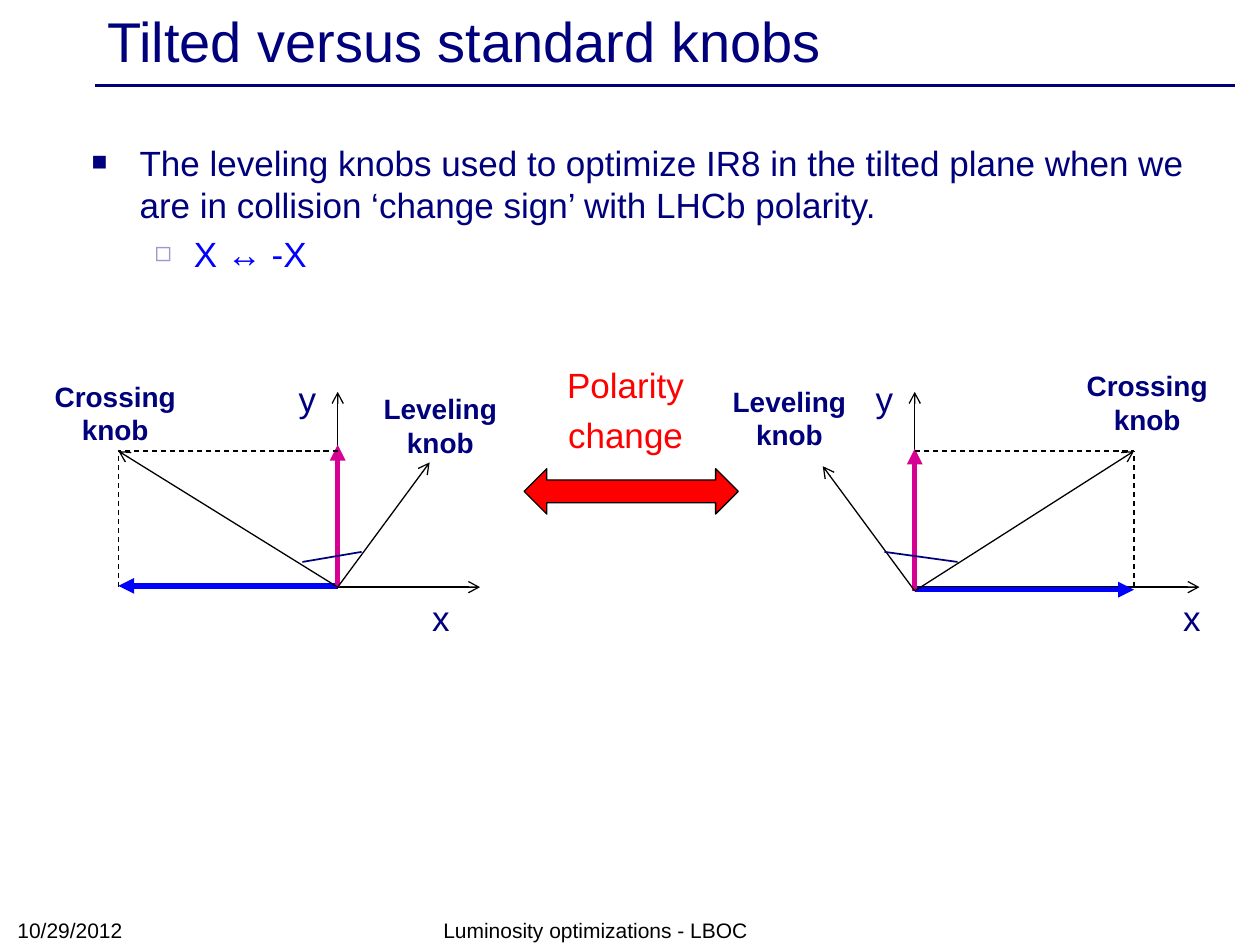
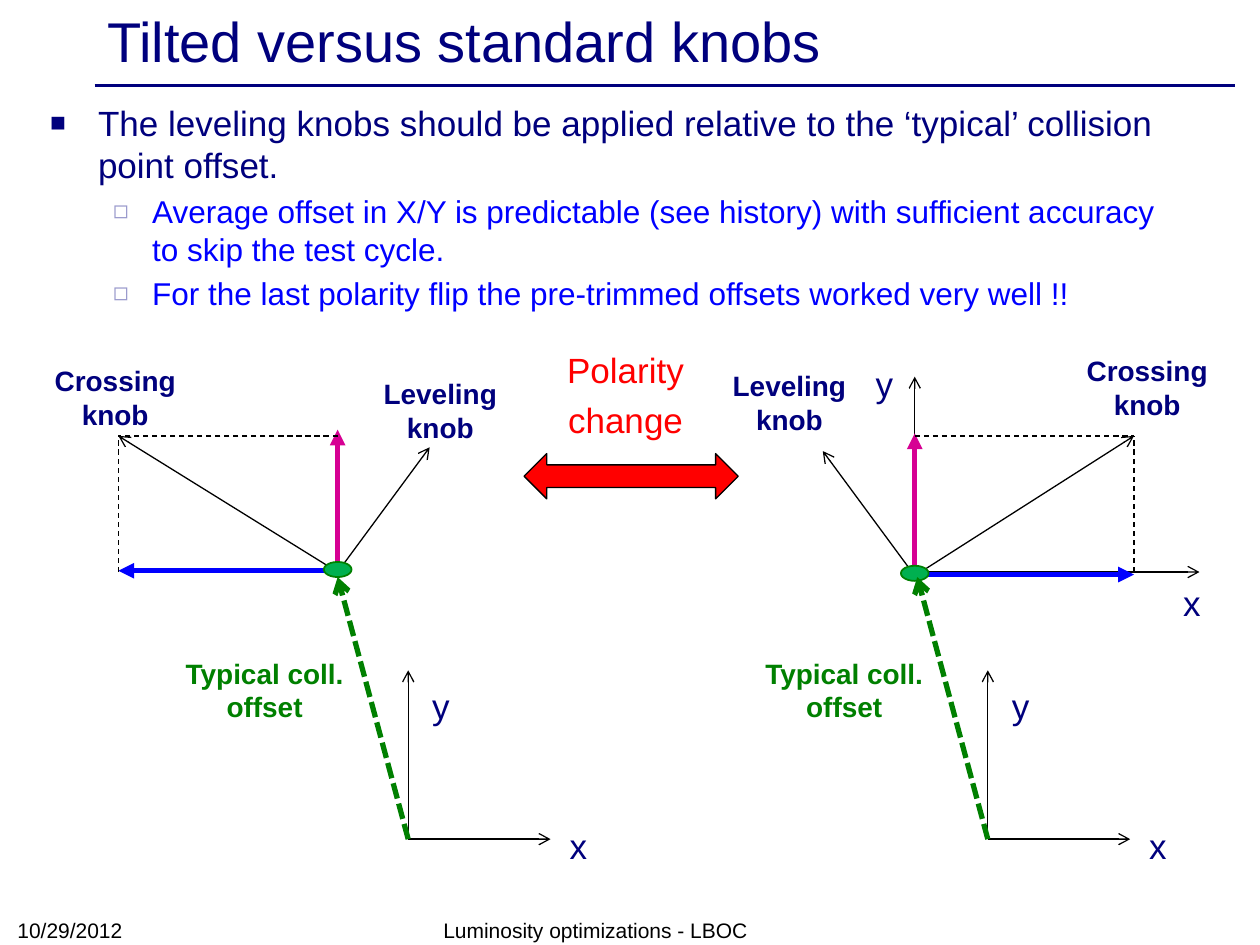
from dataclasses import dataclass

from pptx import Presentation
from pptx.dml.color import RGBColor
from pptx.enum import dml, shapes, text
from pptx.oxml.ns import qn
from pptx.util import Inches, Pt
from lxml import etree


@dataclass(frozen=True)
class Theme:
    font: str = "Arial"
    navy: str = "00007D"
    blue: str = "0000FF"
    lilac: str = "9999CC"
    magenta: str = "D60093"
    red: str = "FF0000"
    green: str = "008000"
    leaf: str = "00B050"
    black: str = "000000"
    title: int = 32
    body: int = 20
    sub: int = 18
    label: int = 16
    footer: int = 12
    thin: float = 0.75
    thick: float = 3


T = Theme()
ALIGN = text.PP_ALIGN
ANCHOR = text.MSO_ANCHOR
DASH = dml.MSO_LINE

# Knob diagrams: axis origin x, direction of the crossing knob, x axis length,
# drop of the knob origin below the axis, label places relative to the origin
LEFT = dict(x=2.68, sign=-1, axis=1.13, drop=0, x_label=0.65,
            crossing=(-2.48, -1.7), leveling=(0.23, -1.6))
RIGHT = dict(x=7.26, sign=1, axis=2.26, drop=0.03, x_label=2.03,
             crossing=(1.13, -1.78), leveling=(-1.58, -1.66))


# Basic parts

def rgb(value):
    return RGBColor.from_string(value)


def set_attrs(obj, **values):
    for name, value in values.items():
        setattr(obj, name, value)


def style_font(font, size, color, bold=False):
    set_attrs(font, name=T.font, size=Pt(size), bold=bold)
    font.color.rgb = rgb(color)


def add_line(slide, start, end, color=T.black, width=T.thin, dash=None, tip=None):
    ends = [Inches(v) for v in (*start, *end)]
    sp = slide.shapes.add_connector(shapes.MSO_CONNECTOR.STRAIGHT, *ends)
    sp.line.color.rgb = rgb(color)
    set_attrs(sp.line, width=Pt(width), dash_style=dash)
    if tip:
        etree.SubElement(sp.line._get_or_add_ln(), qn("a:tailEnd"), type=tip)
    etree.SubElement(sp._element.spPr, qn("a:effectLst"))


def add_text(slide, box, words, size, color, bold=False, wrap=True,
             align=ALIGN.CENTER, anchor=ANCHOR.TOP, spacing=None):
    tf = slide.shapes.add_textbox(*map(Inches, box)).text_frame
    set_attrs(tf, word_wrap=wrap, vertical_anchor=anchor)
    p = tf.paragraphs[0]
    set_attrs(p, text=words, alignment=align, line_spacing=spacing)
    style_font(p.runs[0].font, size, color, bold)


def add_shape(slide, kind, box, fill, line, width):
    sp = slide.shapes.add_shape(kind, *map(Inches, box))
    sp.shadow.inherit = False
    sp.fill.solid()
    sp.fill.fore_color.rgb = rgb(fill)
    sp.line.color.rgb = rgb(line)
    sp.line.width = Pt(width)


def add_axis_label(slide, x, y, name):
    add_text(slide, (x, y, 0.34, 0.47), name, T.body, T.navy, wrap=False, spacing=1.2)


def add_bullet(p, char, color, percent, left, hang):
    pPr = p._p.get_or_add_pPr()
    pPr.set("marL", str(Inches(left)))
    pPr.set("indent", str(-Inches(hang)))
    bu_color = etree.SubElement(pPr, qn("a:buClr"))
    etree.SubElement(bu_color, qn("a:srgbClr"), val=color)
    etree.SubElement(pPr, qn("a:buSzPct"), val=str(percent * 1000))
    etree.SubElement(pPr, qn("a:buFont"), typeface=T.font)
    etree.SubElement(pPr, qn("a:buChar"), char=char)


# Regions of a slide

def add_frame(prs):
    """Slide with title, rule and footer."""
    slide = prs.slides.add_slide(prs.slide_layouts[5])
    add_line(slide, (0.75, 0.68), (9.8, 0.68), T.navy, 2)
    sp = slide.shapes.title
    set_attrs(sp, left=Inches(0.75), top=Inches(0.03), width=Inches(9), height=Inches(0.57))
    tf = sp.text_frame
    set_attrs(tf, vertical_anchor=ANCHOR.MIDDLE, auto_size=text.MSO_AUTO_SIZE.NONE)
    p = tf.paragraphs[0]
    set_attrs(p, text="Tilted versus standard knobs", alignment=ALIGN.LEFT)
    style_font(p.runs[0].font, T.title, T.navy)
    for box, words in (((3.42, 7.25, 3.17, 0.28), "Luminosity optimizations - LBOC"),
                       ((0.04, 7.24, 2.33, 0.29), "10/29/2012")):
        add_text(slide, box, words, T.footer, T.black, align=ALIGN.LEFT, anchor=ANCHOR.BOTTOM)
    return slide


def add_body(slide, box, point, subpoints, sub_size):
    tf = slide.shapes.add_textbox(*map(Inches, box)).text_frame
    tf.word_wrap = True
    for i, words in enumerate([point, *subpoints]):
        p = tf.add_paragraph() if i else tf.paragraphs[0]
        if i:
            add_bullet(p, "◻", T.lilac, 80, 0.81, 0.31)
            set_attrs(p, level=1, space_before=Pt(0.2 * sub_size))
        else:
            add_bullet(p, "■", T.navy, 75, 0.38, 0.38)
        p.text = words
        style_font(p.runs[0].font, sub_size if i else T.body, T.blue if i else T.navy)


def add_knobs(slide, side, y, axes=True):
    """Crossing and leveling knobs around the axis origin of one side."""
    x, sign = side["x"], side["sign"]
    knob_y = y + side["drop"]
    origin = (x, knob_y)
    corner_x, corner_y = x + sign * 1.74, y - 1.08
    corner = (corner_x, corner_y)
    if axes:
        add_line(slide, (x, y), (x + side["axis"], y), tip="arrow")
        add_line(slide, (x, y), (x, y - 1.55), tip="arrow")
        add_axis_label(slide, x + side["x_label"], y - 0.04, "x")
        add_axis_label(slide, x - 0.41, y - 1.78, "y")
    # Components of the crossing knob
    add_line(slide, (x, knob_y - 0.01), (corner_x, knob_y - 0.01), T.blue, T.thick,
             tip="triangle")
    add_line(slide, origin, (x, knob_y - 1.13), T.magenta, T.thick, tip="triangle")
    for start in ((x, corner_y), (corner_x, y)):
        add_line(slide, start, corner, dash=DASH.DASH)
    # Knob directions
    add_line(slide, origin, corner, tip="arrow")
    add_line(slide, origin, (x - sign * 0.73, knob_y - 0.99), tip="arrow")
    for key, words, width in (("crossing", "Crossing knob", 1.43),
                              ("leveling", "Leveling knob", 1.17)):
        dx, dy = side[key]
        add_text(slide, (x + dx, y + dy, width, 0.64), words, T.label, T.navy, bold=True)


def add_polarity_change(slide, x, y):
    add_shape(slide, shapes.MSO_SHAPE.LEFT_RIGHT_ARROW, (x + 0.08, y + 0.95, 1.7, 0.36),
              T.red, T.black, T.thin)
    add_text(slide, (x, y, 1.77, 0.87), "Polarity change", T.body, T.red, spacing=1.2)


def add_collision_point(slide, side, y):
    add_shape(slide, shapes.MSO_SHAPE.OVAL,
              (side["x"] - 0.11, y + side["drop"] - 0.08, 0.22, 0.12), T.leaf, T.green, 1)


def add_offset(slide, x, y):
    """Reference axes with the arrow to the typical collision point."""
    add_line(slide, (x, y), (x + 1.13, y), tip="arrow")
    add_line(slide, (x, y), (x, y - 1.34), tip="arrow")
    add_axis_label(slide, x + 1.18, y - 0.23, "x")
    add_axis_label(slide, x + 0.09, y - 1.34, "y")
    add_line(slide, (x, y), (x - 0.56, y - 2.08), T.green, T.thick, DASH.SQUARE_DOT, "arrow")
    add_text(slide, (x - 2, y - 1.5, 1.72, 0.64), "Typical coll. offset",
             T.label, T.green, bold=True)


# Slides

def build_sign_slide(prs):
    slide = add_frame(prs)
    add_body(slide, (0.63, 1.07, 9, 1.34),
             "The leveling knobs used to optimize IR8 in the tilted plane when we "
             "are in collision ‘change sign’ with LHCb polarity.",
             ["X ↔ -X"], T.body)
    for side in (RIGHT, LEFT):
        add_knobs(slide, side, 4.66)
    add_polarity_change(slide, 4.08, 2.77)
    # Angle between the knobs
    add_line(slide, (2.4, 4.46), (2.87, 4.38), T.navy, 1)
    add_line(slide, (7.02, 4.38), (7.6, 4.46), T.navy, 1)


def build_offset_slide(prs):
    slide = add_frame(prs)
    add_body(slide, (0.3, 0.76, 9, 1.89),
             "The leveling knobs should be applied relative to the ‘typical’ collision "
             "point offset.",
             ["Average offset in X/Y is predictable (see history) with sufficient accuracy "
              "to skip the test cycle.",
              "For the last polarity flip the pre-trimmed offsets worked very well !!"], T.sub)
    for side, offset_x in ((RIGHT, 7.84), (LEFT, 3.24)):
        add_knobs(slide, side, 4.54, axes=side is RIGHT)
        add_collision_point(slide, side, 4.54)
        add_offset(slide, offset_x, 6.66)
    add_polarity_change(slide, 4.08, 2.65)


def main():
    prs = Presentation()
    set_attrs(prs, slide_width=Inches(10), slide_height=Inches(7.5))
    build_sign_slide(prs)
    build_offset_slide(prs)
    prs.save("out.pptx")


if __name__ == "__main__":
    main()
